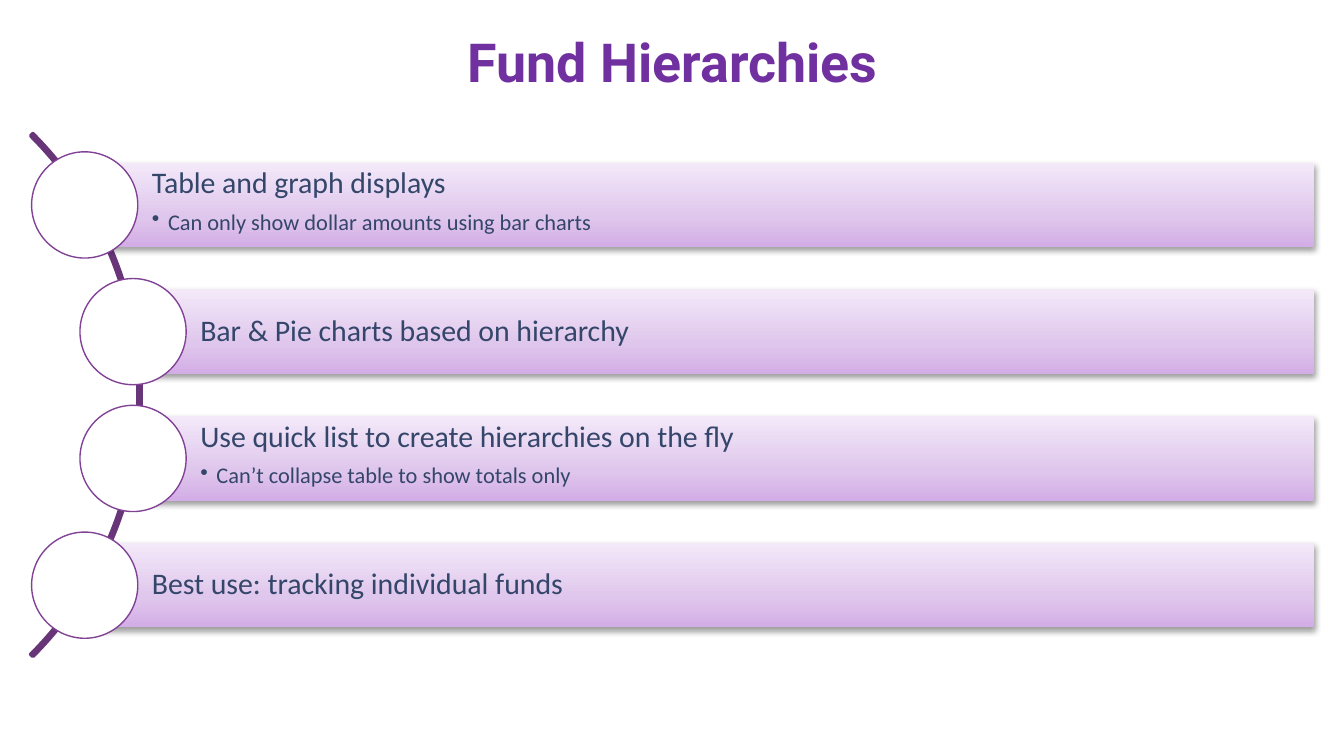
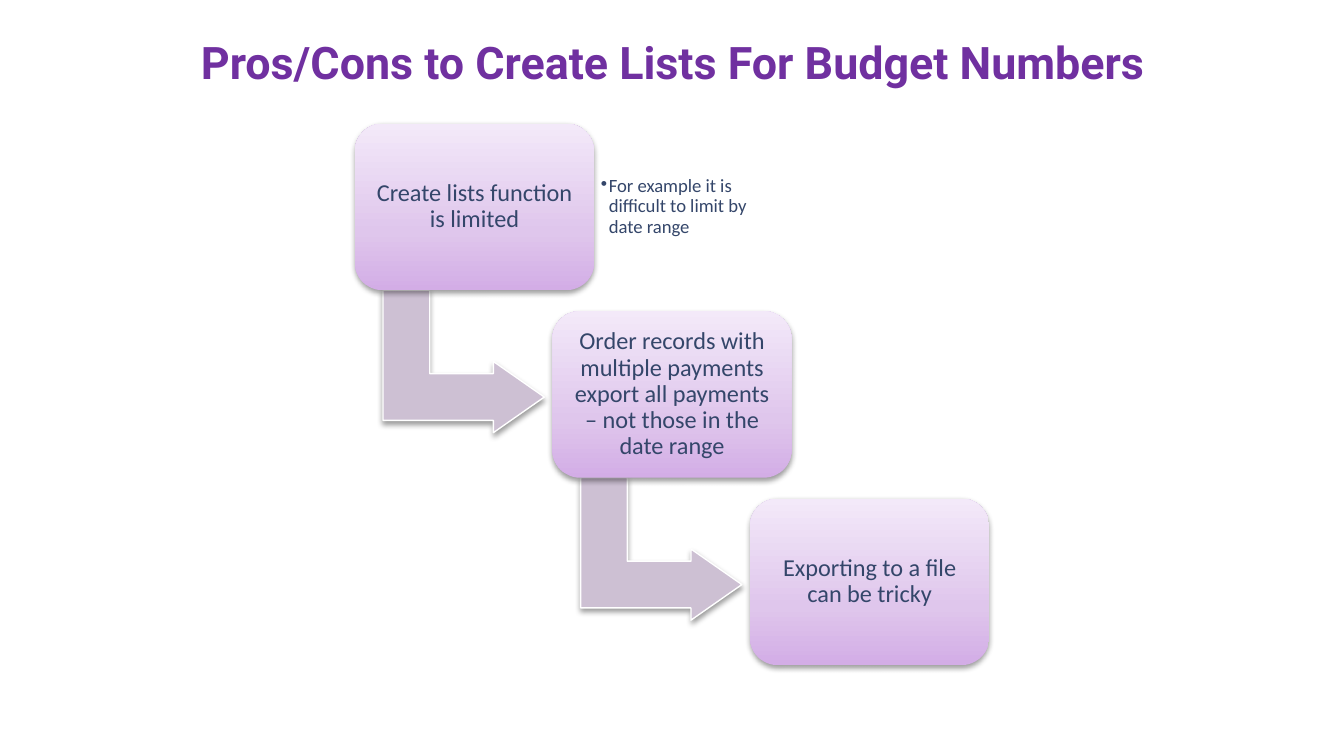
from lxml.etree import SubElement
from copy import deepcopy
from pptx import Presentation
from pptx.dml.color import RGBColor
from pptx.enum.shapes import MSO_SHAPE
from pptx.enum.text import MSO_ANCHOR, MSO_AUTO_SIZE, PP_ALIGN
from pptx.oxml.ns import qn
from pptx.util import Emu, Inches, Pt

TITLE_PURPLE = RGBColor(0x70, 0x30, 0xA0)
ARC_PURPLE = RGBColor(0x67, 0x35, 0x78)
RING_PURPLE = RGBColor(0x81, 0x42, 0x96)
ARROW_GREY = RGBColor(0xCD, 0xC0, 0xD3)
TEXT_BLUE = RGBColor(0x34, 0x46, 0x6A)
WHITE = RGBColor(0xFF, 0xFF, 0xFF)
LILAC_STOPS = [
    (0, RGBColor(0xD3, 0xAD, 0xE6)),
    (0.35, RGBColor(0xDF, 0xC6, 0xEC)),
    (1, RGBColor(0xF3, 0xE9, 0xF9)),
]

COLUMNS, ROWS = 100, 56.25
CELL = Inches(10) / COLUMNS

BAR_RIGHT, BAR_TOP, BAR_ROWS, BAR_PITCH = 97.8, 12.1, 6.3, 9.43
OUTER_LEFT, INNER_LEFT = 6.3, 9.9
RING = 7.9
CARD_LEFT, CARD_TOP, CARD_COLUMNS, CARD_ROWS = 26.4, 9.2, 17.8, 12.4
STEP_RIGHT, STEP_DOWN = 14.7, 13.95

BARS = [
    (OUTER_LEFT, "Table and graph displays", "Can only show dollar amounts using bar charts"),
    (INNER_LEFT, "Bar & Pie charts based on hierarchy", None),
    (INNER_LEFT, "Use quick list to create hierarchies on the fly",
     "Can’t collapse table to show totals only"),
    (OUTER_LEFT, "Best use: tracking individual funds", None),
]
CARDS = [
    ("Create lists function is limited", "For example it is difficult to limit by date range"),
    ("Order records with multiple payments export all payments – not those in the date range", None),
    ("Exporting to a file can be tricky", None),
]


def cells(*lengths):
    return [Emu(round(length * CELL)) for length in lengths]


def apply(target, formats):
    for name, value in formats.items():
        setattr(target, name, value)


def add_title_slide(deck, wording, size):
    slide = deck.slides.add_slide(deck.slide_layouts[5])
    title = slide.shapes.title
    apply(title, dict(zip(("left", "top", "width", "height"), cells(1.7, 1.5, 96.7, 6.1))))
    frame = title.text_frame
    apply(frame, {"auto_size": MSO_AUTO_SIZE.NONE, "word_wrap": True,
                  "vertical_anchor": MSO_ANCHOR.MIDDLE})
    write(frame.paragraphs[0], wording, size, font="Roboto", color=TITLE_PURPLE,
          bold=True, alignment=PP_ALIGN.CENTER)
    return slide


def write(paragraph, wording, size, font="Calibri", color=TEXT_BLUE, bold=False, **layout):
    apply(paragraph, layout)
    run = paragraph.add_run()
    run.text = wording
    apply(run.font, {"name": font, "size": Pt(size), "bold": bold})
    run.font.color.rgb = color


def write_heading(paragraph, wording, size, alignment):
    write(paragraph, wording, size, alignment=alignment, line_spacing=0.9,
          space_after=Pt(size * 0.35))


def write_bullet(paragraph, wording, size, indent):
    properties = paragraph._p.get_or_add_pPr()
    properties.set("marL", str(Inches(indent)))
    properties.set("indent", str(-Inches(indent)))
    SubElement(properties, qn("a:buChar"), char="•")
    write(paragraph, wording, size, level=1, alignment=PP_ALIGN.LEFT,
          line_spacing=0.9, space_after=Pt(size * 0.15))


def set_frame(frame, anchor, inset, left_inset=None):
    inset = Inches(inset)
    left = inset if left_inset is None else Inches(left_inset)
    apply(frame, {"word_wrap": True, "vertical_anchor": anchor, "margin_left": left,
                  "margin_top": inset, "margin_right": inset, "margin_bottom": inset})


def add_figure(slide, preset, box, fill=None, line=None, weight=0.75, adjustments=()):
    figure = slide.shapes.add_shape(preset, *cells(*box))
    figure.shadow.inherit = False
    for index, value in enumerate(adjustments):
        figure.adjustments[index] = value
    if fill is None:
        figure.fill.background()
    else:
        figure.fill.solid()
        figure.fill.fore_color.rgb = fill
    if line is None:
        figure.line.fill.background()
    else:
        figure.line.color.rgb = line
        figure.line.width = Pt(weight)
    return figure


def drop_shadow(figure):
    effects = figure._element.spPr.find(qn("a:effectLst"))
    shadow = SubElement(effects, qn("a:outerShdw"), blurRad=str(Pt(3.1)),
                        dist=str(Pt(1.6)), dir="5400000", rotWithShape="0")
    black = SubElement(shadow, qn("a:srgbClr"), val="000000")
    SubElement(black, qn("a:alpha"), val="38000")


def shade_lilac(figure):
    figure.fill.gradient()
    figure.fill.gradient_angle = 90
    stop_list = figure._element.spPr.find(qn("a:gradFill")).find(qn("a:gsLst"))
    stop_list.append(deepcopy(stop_list[0]))
    for stop, (position, color) in zip(figure.fill.gradient_stops, LILAC_STOPS):
        stop.position = position
        stop.color.rgb = color
    drop_shadow(figure)


def add_bar(slide, row, left, heading, detail):
    top = BAR_TOP + row * BAR_PITCH
    bar = add_figure(slide, MSO_SHAPE.RECTANGLE, (left, top, BAR_RIGHT - left, BAR_ROWS))
    shade_lilac(bar)
    frame = bar.text_frame
    set_frame(frame, MSO_ANCHOR.TOP if detail else MSO_ANCHOR.MIDDLE, 0.04, 0.5)
    write_heading(frame.paragraphs[0], heading, 16, PP_ALIGN.LEFT)
    if detail:
        write_bullet(frame.add_paragraph(), detail, 12, 0.12)
    ring_top = top + (BAR_ROWS - RING) / 2
    add_figure(slide, MSO_SHAPE.OVAL, (left - RING / 2, ring_top, RING, RING),
               WHITE, RING_PURPLE)


def add_step_arrow(slide, left, top):
    arrow = add_figure(slide, MSO_SHAPE.BENT_UP_ARROW, (left + 2.8, top + 11.7, 10.6, 12),
                       ARROW_GREY, WHITE, adjustments=(0.328, 0.25, 0.358))
    arrow.rotation = 90
    drop_shadow(arrow)


def add_card(slide, left, top, heading, detail):
    card = add_figure(slide, MSO_SHAPE.ROUNDED_RECTANGLE,
                      (left, top, CARD_COLUMNS, CARD_ROWS), adjustments=(0.167,))
    shade_lilac(card)
    set_frame(card.text_frame, MSO_ANCHOR.MIDDLE, 0.05)
    write_heading(card.text_frame.paragraphs[0], heading, 13, PP_ALIGN.CENTER)
    if detail:
        example = slide.shapes.add_textbox(*cells(left + CARD_COLUMNS, top + 1.2, 12.9, 10))
        set_frame(example.text_frame, MSO_ANCHOR.MIDDLE, 0.05)
        write_bullet(example.text_frame.paragraphs[0], detail, 10, 0.06)


def build_hierarchies(deck):
    slide = add_title_slide(deck, "Fund Hierarchies", 28.8)
    add_figure(slide, MSO_SHAPE.BLOCK_ARC, (-44.5, 1.9, 55, 55), line=ARC_PURPLE,
               weight=2, adjustments=(189, 27, 0.004))
    for row, bar in enumerate(BARS):
        add_bar(slide, row, *bar)


def build_pros_cons(deck):
    slide = add_title_slide(deck, "Pros/Cons to Create Lists For Budget Numbers", 24)
    for step, (heading, detail) in enumerate(CARDS):
        left, top = CARD_LEFT + step * STEP_RIGHT, CARD_TOP + step * STEP_DOWN
        if step < len(CARDS) - 1:
            add_step_arrow(slide, left, top)
        add_card(slide, left, top, heading, detail)


def main():
    deck = Presentation()
    deck.slide_width, deck.slide_height = cells(COLUMNS, ROWS)
    build_hierarchies(deck)
    build_pros_cons(deck)
    deck.save("out.pptx")


if __name__ == "__main__":
    main()
